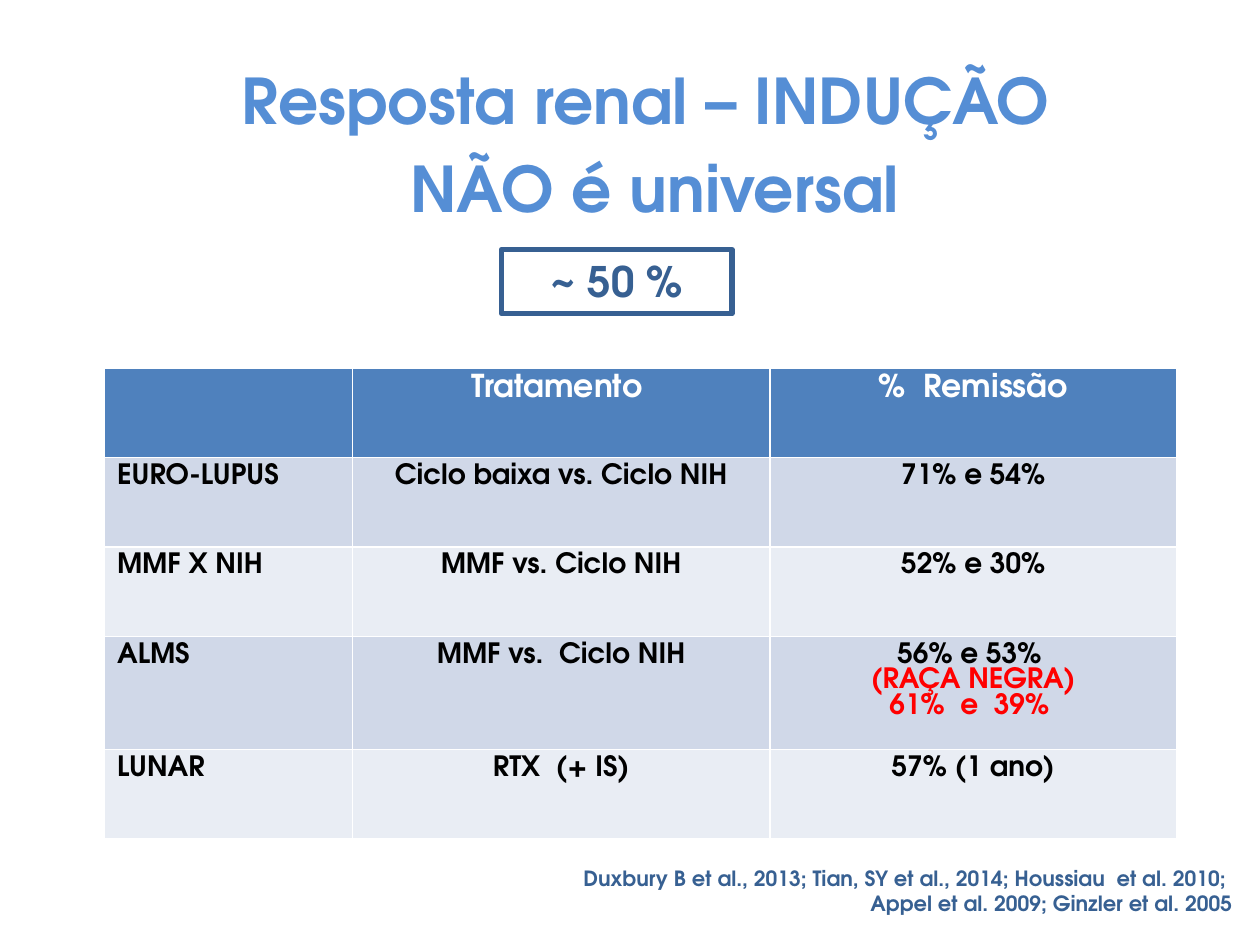
"""Build the slide on renal response to induction therapy."""
from pptx import Presentation
from pptx.dml.color import RGBColor
from pptx.enum.shapes import MSO_SHAPE
from pptx.enum.text import MSO_ANCHOR, PP_ALIGN
from pptx.util import Inches, Pt

LEFT, CENTER, RIGHT = PP_ALIGN.LEFT, PP_ALIGN.CENTER, PP_ALIGN.RIGHT
FONT = "TeX Gyre Adventor"
WHITE, BLACK, RED = "FFFFFF", "000000", "FF0000"
NAVY, SKY, HEADER_BLUE = "376092", "558ED5", "4F81BD"
BANDS = ["D0D8E8", "E9EDF4"]

TITLE = ["Resposta renal – INDUÇÃO", " NÃO é universal"]
RATE = ["~ 50 %"]
REFERENCES = [
    "Duxbury B et al., 2013; Tian, SY et al., 2014; Houssiau  et al. 2010; ",
    "Appel et al. 2009; Ginzler et al. 2005",
]
TRIALS = [
    ["", "Tratamento ", "%  Remissão"],
    ["EURO-LUPUS", "Ciclo baixa vs. Ciclo NIH", "71% e 54%"],
    ["MMF X NIH", "MMF vs. Ciclo NIH", "52% e 30%"],
    ["ALMS", "MMF vs.  Ciclo NIH", "56% e 53% \n(RAÇA NEGRA)\n61%  e  39% "],
    ["LUNAR", "RTX  (+ IS)", "57% (1 ano)"],
]
COLUMN_WIDTHS = [1.97, 3.31, 3.23]
ROW_HEIGHTS = [0.71, 0.71, 0.71, 0.9, 0.71]


def rgb(value):
    """Turn a hex string into a colour."""
    return RGBColor.from_string(value)


def write(frame, lines, size, colors, align, before=None):
    """Fill a text frame with one bold paragraph per line."""
    frame.word_wrap = True
    for index, line in enumerate(lines):
        para = frame.paragraphs[0] if index == 0 else frame.add_paragraph()
        para.text = line
        para.alignment = align
        para.space_before = before
        font = para.font
        font.name, font.size, font.bold = FONT, Pt(size), True
        font.color.rgb = rgb(colors[min(index, len(colors) - 1)])


def add_text(page, place, *style, before=None):
    """Add a text box and return its frame."""
    frame = page.shapes.add_textbox(*map(Inches, place)).text_frame
    write(frame, *style, before=before)
    return frame


def add_rate(page):
    """Add the outlined box with the overall rate."""
    box = page.shapes.add_shape(MSO_SHAPE.RECTANGLE, *map(Inches, (3.98, 1.98, 1.83, 0.51)))
    box.shadow.inherit = False
    box.fill.background()
    box.line.color.rgb = rgb(NAVY)
    box.line.width = Pt(3)
    box.text_frame.vertical_anchor = MSO_ANCHOR.TOP
    write(box.text_frame, RATE, 24, [NAVY], CENTER)


def add_trials(page):
    """Add the table of trials."""
    place = (0.83, 2.92, sum(COLUMN_WIDTHS), sum(ROW_HEIGHTS))
    table = page.shapes.add_table(
        len(TRIALS), len(COLUMN_WIDTHS), *map(Inches, place)).table
    for column, width in zip(table.columns, COLUMN_WIDTHS):
        column.width = Inches(width)
    for row, height in zip(table.rows, ROW_HEIGHTS):
        row.height = Inches(height)
    for r, trial in enumerate(TRIALS):
        for c, text in enumerate(trial):
            cell = table.cell(r, c)
            cell.fill.solid()
            cell.fill.fore_color.rgb = rgb(BANDS[(r - 1) % 2] if r else HEADER_BLUE)
            size, colors = (16, [BLACK, RED]) if r else (18, [WHITE])
            write(cell.text_frame, text.split("\n"), size, colors, CENTER if c else LEFT)


def main():
    """Create and save the deck."""
    deck = Presentation()
    deck.slide_width, deck.slide_height = Inches(10), Inches(7.5)
    page = deck.slides.add_slide(deck.slide_layouts[6])
    add_trials(page)
    add_text(page, (2.64, 6.82, 7.24, 0.91), REFERENCES, 12, [NAVY], RIGHT)
    title = add_text(page, (0.85, 0.44, 8.43, 0.94), TITLE, 36, [SKY], CENTER, before=Pt(7.2))
    title.margin_left = Inches(0.22)
    add_rate(page)
    deck.save("out.pptx")


if __name__ == "__main__":
    main()
